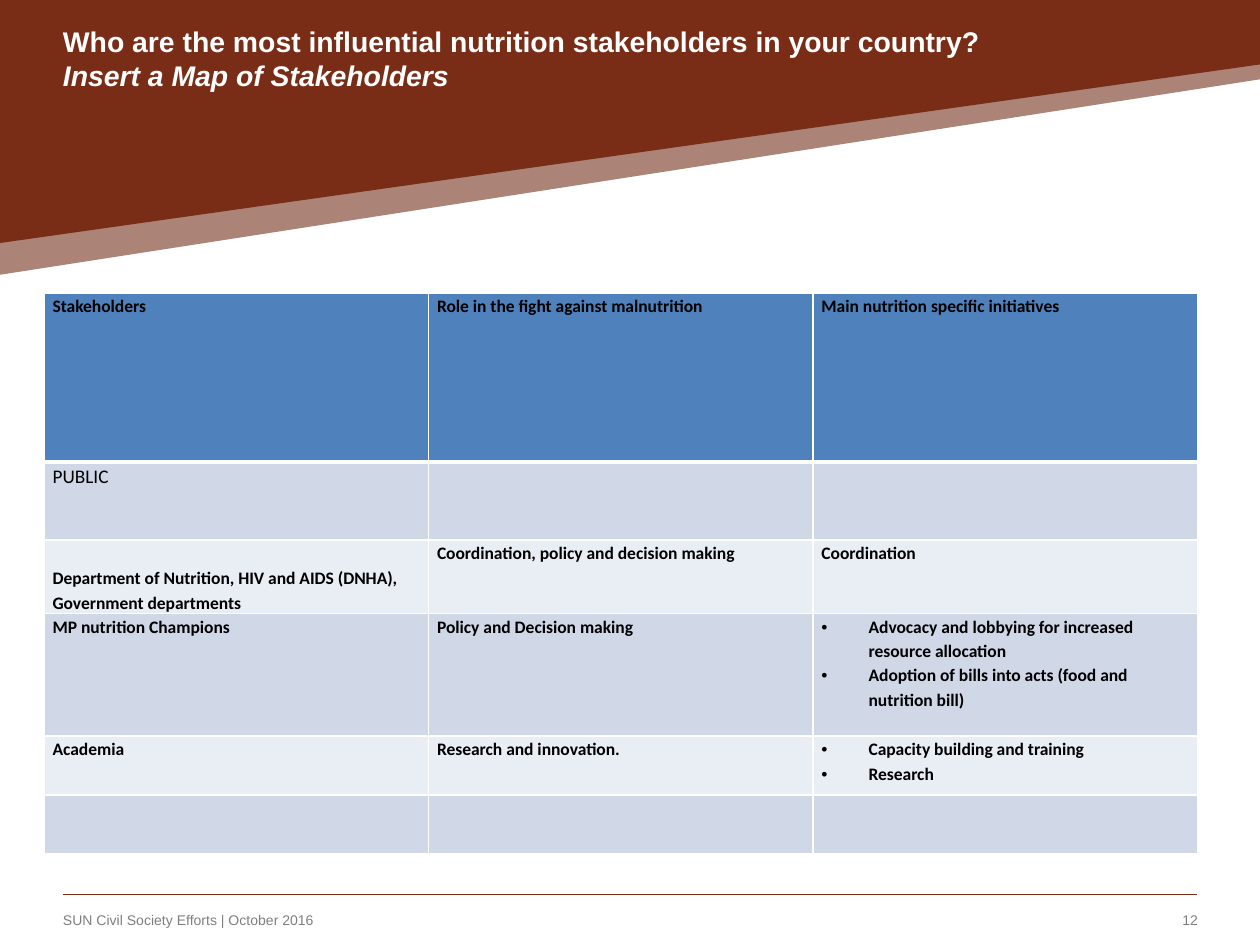
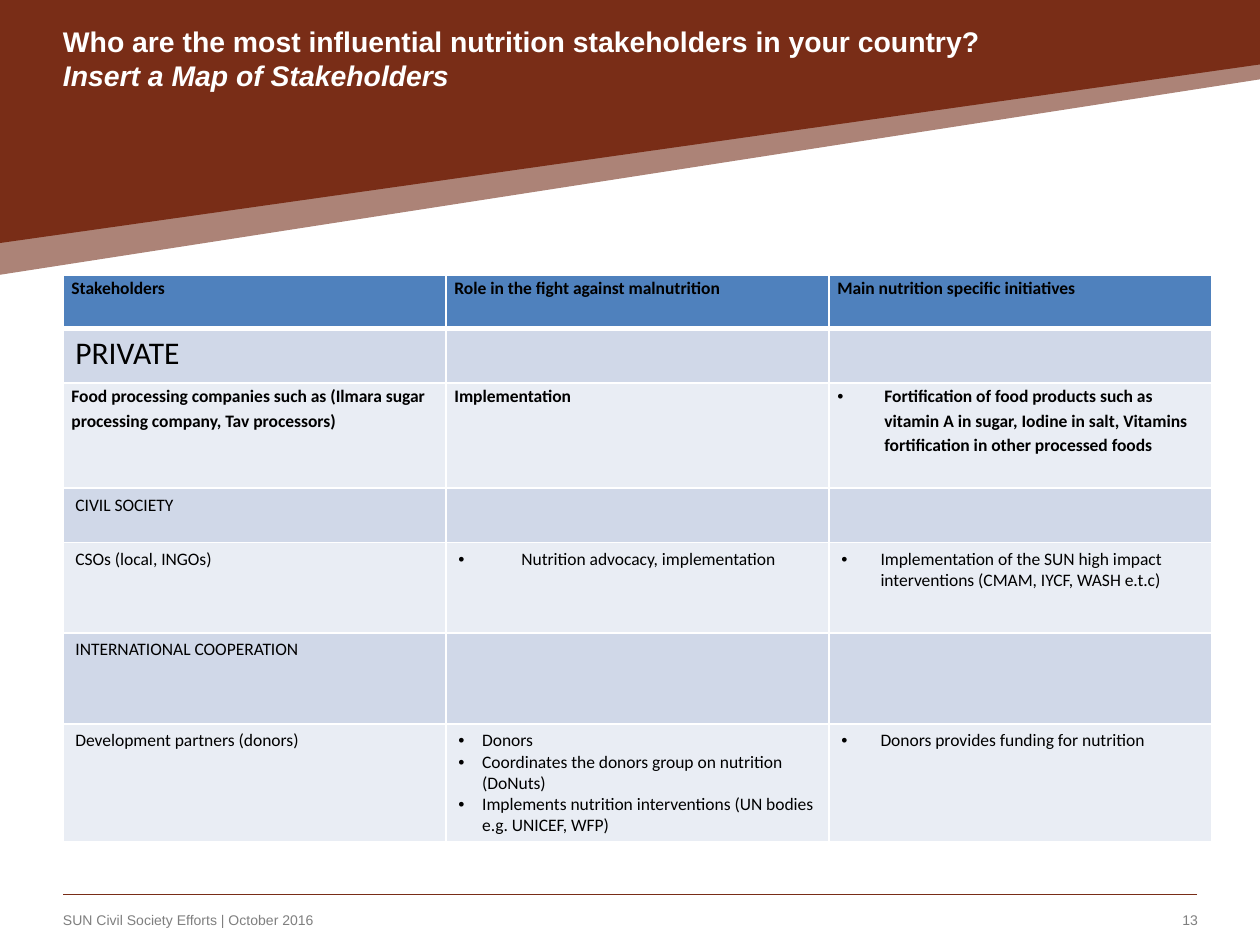
from dataclasses import dataclass

from lxml.etree import SubElement
from pptx import Presentation
from pptx.dml.color import RGBColor
from pptx.enum.shapes import MSO_CONNECTOR
from pptx.enum.text import MSO_ANCHOR, PP_ALIGN
from pptx.oxml.ns import qn
from pptx.util import Cm, Pt

BROWN, ROSE, GREY = "792D17", "AC8377", "7F7F7F"
WHITE, BLACK = "FFFFFF", "000000"
HEADER_BLUE, BAND_BLUE, BAND_PALE = "4F81BD", "D0D8E8", "E9EDF4"
SLIDE_WIDTH, SLIDE_HEIGHT = 25.4, 19.05
MARGIN, FOOTER_TOP, FOOTER_HEIGHT = 1.27, 18.03, 1.02


@dataclass
class CellStyle:
    """Type size, weight, line spacing and margins of a table cell."""
    size: float = 10
    bold: bool = False
    spacing: float = 1.0
    side: float = 0.25
    top: float = 0.13


@dataclass
class Bullets:
    """Bulleted lines with a hanging indent in centimetres."""
    indent: float
    lines: tuple


TIGHT = CellStyle(bold=True, spacing=1.15, side=0.17, top=0)
LOWERED = CellStyle(bold=True, spacing=1.15, side=0.17, top=0.5)
SECTOR = CellStyle(size=11, spacing=1.15, side=0.17, top=0)
LARGE = CellStyle(size=18)
PLAIN = CellStyle()

HEADINGS = ("Stakeholders", "Role in the fight against malnutrition",
            "Main nutrition specific initiatives")

PUBLIC_ROWS = [
    (3.4, TIGHT, HEADINGS),
    (1.58, SECTOR, ("PUBLIC", "", "")),
    (1.47, TIGHT, ("Department of Nutrition, HIV and AIDS (DNHA), Government departments",
                   "Coordination, policy and decision making", "Coordination")),
    (2.47, TIGHT, ("MP nutrition Champions", "Policy and Decision making",
                   Bullets(0.95, ("Advocacy and lobbying for increased resource allocation",
                                  "Adoption of bills into acts (food and nutrition bill)")))),
    (1.19, TIGHT, ("Academia", "Research and innovation.",
                   Bullets(0.95, ("Capacity building and training", "Research")))),
    (1.19, PLAIN, ("", "", "")),
]

PRIVATE_ROWS = [
    (1.08, TIGHT, HEADINGS),
    (1.1, LARGE, ("PRIVATE", "", "")),
    (2.12, TIGHT, ("Food processing companies such as (Ilmara sugar processing company, "
                   "Tav processors)", "Implementation",
                   Bullets(0.95, ("Fortification of food products such as vitamin A in sugar, "
                                  "Iodine in salt, Vitamins fortification in other "
                                  "processed foods",)))),
    (1.1, PLAIN, ("CIVIL SOCIETY", "", "")),
    (1.82, PLAIN, ("CSOs (local, INGOs)",
                   Bullets(1.27, ("Nutrition advocacy, implementation",)),
                   Bullets(0.79, ("Implementation of the SUN high impact interventions "
                                  "(CMAM, IYCF, WASH e.t.c)",)))),
    (1.83, PLAIN, ("INTERNATIONAL COOPERATION", "", "")),
    (2.38, PLAIN, ("Development partners (donors)",
                   Bullets(0.48, ("Donors", "Coordinates the donors group on nutrition (DoNuts)",
                                  "Implements nutrition interventions (UN bodies e.g. "
                                  "UNICEF, WFP)")),
                   Bullets(0.79, ("Donors provides funding for nutrition",)))),
]


def colour(value):
    """Turn a hex string into a colour."""
    return RGBColor.from_string(value)


class StakeholderDeck:
    """Holds the presentation, its style and the current page."""

    def __init__(self):
        """Start an empty deck."""
        self.deck = Presentation()
        self.deck.slide_width = Cm(SLIDE_WIDTH)
        self.deck.slide_height = Cm(SLIDE_HEIGHT)
        self.page = None

    def add_page(self, number):
        """Add a page with bands, title, rule and footer."""
        self.page = self.deck.slides.add_slide(self.deck.slide_layouts[6])
        self.add_band(ROSE, [(25.4, 0.03), (25.4, 1.6), (0, 5.54), (0, 4.06),
                             (17.98, 0.51), (23.88, 0.05)])
        self.add_band(BROWN, [(0, 0), (25.4, 0), (25.4, 1.3), (0, 4.9)])
        self.add_rule()
        self.add_title()
        self.add_footer(MARGIN, 20.93, "SUN Civil Society Efforts | October 2016", PP_ALIGN.LEFT)
        self.add_footer(22.2, 1.95, str(number), PP_ALIGN.RIGHT)

    def add_band(self, fill, points):
        """Draw a filled polygon."""
        corners = [(Cm(x), Cm(y)) for x, y in points]
        builder = self.page.shapes.build_freeform(*corners[0])
        builder.add_line_segments(corners[1:], close=True)
        band = builder.convert_to_shape()
        band.shadow.inherit = False
        band.fill.solid()
        band.fill.fore_color.rgb = colour(fill)
        band.line.fill.background()

    def add_rule(self):
        """Draw the line above the footer."""
        rule = self.page.shapes.add_connector(
            MSO_CONNECTOR.STRAIGHT, Cm(SLIDE_WIDTH - MARGIN), Cm(FOOTER_TOP),
            Cm(MARGIN), Cm(FOOTER_TOP))
        rule.line.color.rgb = colour(BROWN)
        rule.line.width = Pt(1)
        SubElement(rule._element.spPr, qn("a:effectLst"))

    def add_box(self, left, top, width, height, anchor):
        """Add a wrapping text box without margins and return its first paragraph."""
        box = self.page.shapes.add_textbox(Cm(left), Cm(top), Cm(width), Cm(height))
        frame = box.text_frame
        frame.word_wrap = True
        frame.vertical_anchor = anchor
        frame.margin_left = frame.margin_right = frame.margin_top = frame.margin_bottom = 0
        return frame.paragraphs[0]

    def add_span(self, para, text, size, ink, font="Arial", bold=False, italic=False):
        """Append one formatted run."""
        span = para.add_run()
        span.text = text
        span.font.name = font
        span.font.size = Pt(size)
        span.font.bold = bold
        span.font.italic = italic
        span.font.color.rgb = colour(ink)

    def add_title(self):
        """Write the two-line title."""
        para = self.add_box(MARGIN, 0.81, 22.86, 1.04, MSO_ANCHOR.BOTTOM)
        self.add_span(para, "Who are the most influential nutrition stakeholders in your country?",
                      16.2, WHITE, bold=True)
        para.add_line_break()
        self.add_span(para, "Insert a Map of Stakeholders", 16.2, WHITE, bold=True, italic=True)

    def add_footer(self, left, width, text, align):
        """Write one footer text."""
        para = self.add_box(left, FOOTER_TOP, width, FOOTER_HEIGHT, MSO_ANCHOR.MIDDLE)
        para.alignment = align
        self.add_span(para, text, 8, GREY)

    def add_table(self, left, top, column_width, rows):
        """Add the stakeholder table."""
        count = len(HEADINGS)
        frame = self.page.shapes.add_table(
            len(rows), count, Cm(left), Cm(top), Cm(column_width * count),
            Cm(sum(height for height, _, _ in rows)))
        table = frame.table
        table.first_row = table.horz_banding = False
        for column in table.columns:
            column.width = Cm(column_width)
        for index, (height, style, contents) in enumerate(rows):
            table.rows[index].height = Cm(height)
            fill = HEADER_BLUE if index == 0 else (BAND_PALE, BAND_BLUE)[index % 2]
            for cell, content in zip(table.rows[index].cells, contents):
                self.add_borders(cell, top=3 if index == 1 else 1, bottom=3 if index == 0 else 1)
                cell.fill.solid()
                cell.fill.fore_color.rgb = colour(fill)
                lowered = isinstance(content, str) and content.startswith("Department")
                self.fill_cell(cell, content, LOWERED if lowered else style)

    def add_borders(self, cell, top, bottom):
        """Give a cell white borders."""
        properties = cell._tc.get_or_add_tcPr()
        for side, points in (("L", 1), ("R", 1), ("T", top), ("B", bottom)):
            line = SubElement(properties, qn(f"a:ln{side}"), w=str(Pt(points)))
            solid = SubElement(line, qn("a:solidFill"))
            SubElement(solid, qn("a:srgbClr"), val=WHITE)

    def fill_cell(self, cell, content, style):
        """Write plain or bulleted text into a cell."""
        if not content:
            return
        cell.margin_left = cell.margin_right = Cm(style.side)
        cell.margin_top = Cm(style.top)
        cell.margin_bottom = Cm(min(style.top, 0.13) if style is not LOWERED else 0)
        bulleted = isinstance(content, Bullets)
        for index, text in enumerate(content.lines if bulleted else (content,)):
            frame = cell.text_frame
            para = frame.add_paragraph() if index else frame.paragraphs[0]
            para.line_spacing = style.spacing
            if bulleted:
                self.add_bullet(para, content.indent)
            self.add_span(para, text, style.size, BLACK, "Calibri", style.bold)

    def add_bullet(self, para, indent):
        """Give a paragraph a bullet and a hanging indent."""
        properties = para._p.get_or_add_pPr()
        properties.set("marL", str(Cm(indent)))
        properties.set("indent", str(-Cm(indent)))
        SubElement(properties, qn("a:buFont"), typeface="Arial")
        SubElement(properties, qn("a:buChar"), char="•")


def main():
    """Build both stakeholder pages."""
    stakeholders = StakeholderDeck()
    stakeholders.add_page(12)
    stakeholders.add_table(0.89, 5.91, 7.75, PUBLIC_ROWS)
    stakeholders.add_page(13)
    stakeholders.add_table(MARGIN, 5.54, 7.72, PRIVATE_ROWS)
    stakeholders.deck.save("out.pptx")


if __name__ == "__main__":
    main()
